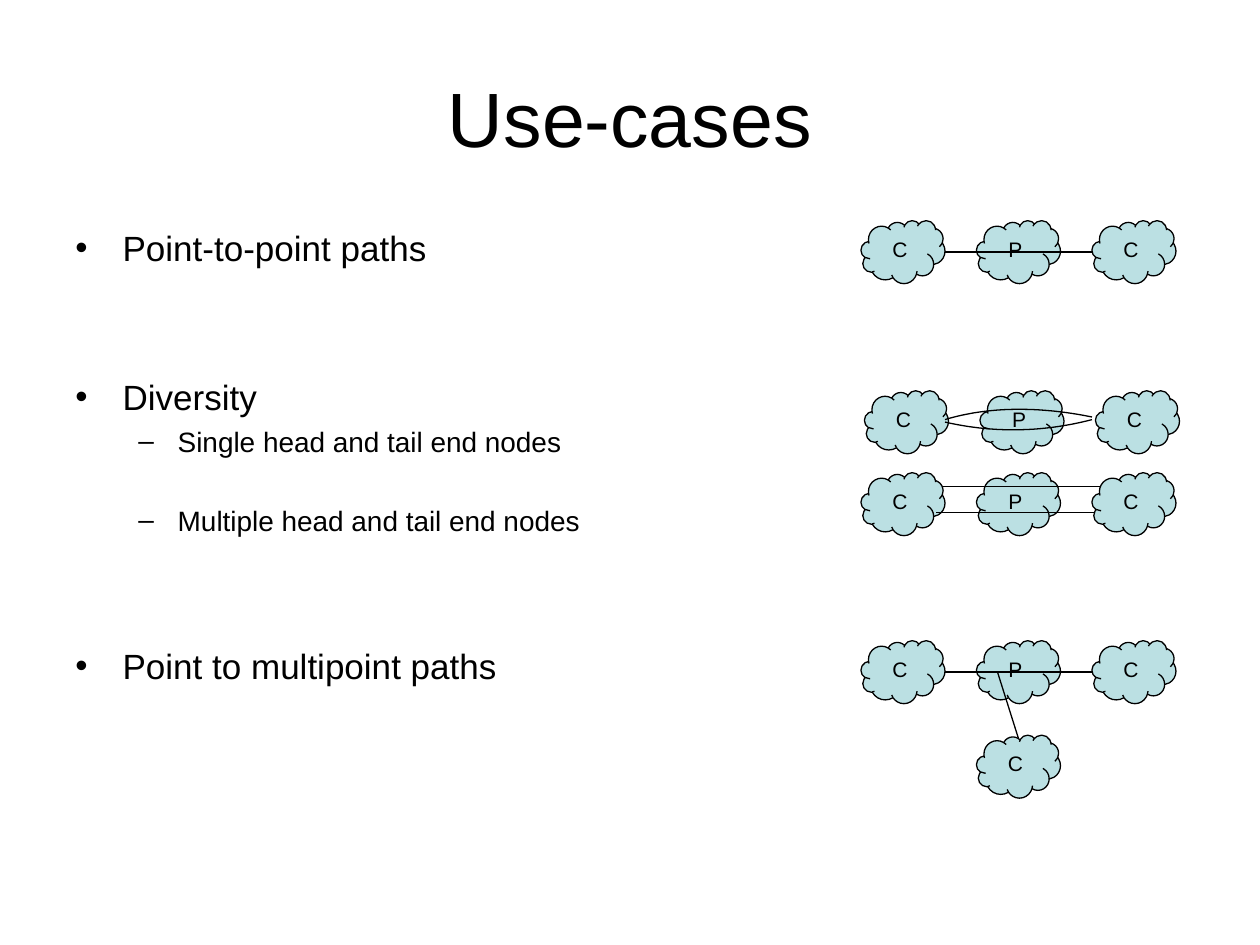
"""Build a slide of path use-cases with small cloud network sketches."""
from lxml.etree import SubElement
from pptx import Presentation
from pptx.dml.color import RGBColor
from pptx.enum.shapes import MSO_CONNECTOR, MSO_SHAPE
from pptx.enum.text import MSO_ANCHOR, PP_ALIGN
from pptx.oxml.ns import qn
from pptx.util import Pt

BLACK = RGBColor(0x00, 0x00, 0x00)
TEAL = RGBColor(0xBB, 0xE0, 0xE3)


def style(para, size):
    for run in para.runs:
        run.font.name = "Arial"
        run.font.size = Pt(size)
        run.font.color.rgb = BLACK


def pen(shape):
    shape.line.color.rgb = BLACK
    shape.line.width = Pt(0.75)


deck = Presentation()
deck.slide_width, deck.slide_height = Pt(720), Pt(540)
slide = deck.slides.add_slide(deck.slide_layouts[5])
shapes = slide.shapes

title = shapes.title
title.left, title.top, title.width, title.height = Pt(36), Pt(21.6), Pt(648), Pt(90)
title.text_frame.text = "Use-cases"
title.text_frame.vertical_anchor = MSO_ANCHOR.MIDDLE
title.text_frame.paragraphs[0].alignment = PP_ALIGN.CENTER
style(title.text_frame.paragraphs[0], 44)

points = [
    ("Point-to-point paths", 0, 2),
    ("Diversity", 0, 61),
    ("Single head and tail end nodes", 1, 4),
    ("Multiple head and tail end nodes", 1, 26),
    ("Point to multipoint paths", 0, 61.5),
]
levels = [(20, 27, 27, "•"), (16, 58.5, 22.5, "–")]
body = shapes.add_textbox(Pt(36), Pt(126), Pt(390), Pt(356.4)).text_frame
body.word_wrap = True
body.text = "\n".join(text for text, level, gap in points)
for para, (text, level, gap) in zip(body.paragraphs, points):
    size, left, hang, mark = levels[level]
    para.level = level
    para.space_before = Pt(gap)
    style(para, size)
    props = para._p.get_or_add_pPr()
    props.set("marL", str(Pt(left)))
    props.set("indent", str(-Pt(hang)))
    SubElement(props, qn("a:buFont"), typeface="Arial")
    SubElement(props, qn("a:buChar"), char=mark)

rows = [(492, 126), (494, 223.2), (492, 270), (492, 366)]
clouds = [(left + 66 * i, top, name)
          for left, top in rows for i, name in enumerate("CPC")]
clouds.append((558, 420, "C"))
for left, top, name in clouds:
    cloud = shapes.add_shape(MSO_SHAPE.CLOUD, Pt(left), Pt(top), Pt(48), Pt(36))
    cloud.shadow.inherit = False
    cloud.fill.solid()
    cloud.fill.fore_color.rgb = TEAL
    pen(cloud)
    frame = cloud.text_frame
    frame.text = name
    frame.vertical_anchor = MSO_ANCHOR.TOP
    frame.paragraphs[0].alignment = PP_ALIGN.CENTER
    style(frame.paragraphs[0], 12)

lines = [
    (540, 144, 624, 144),
    (538.5, 278, 628.5, 278),
    (535, 293, 625, 293),
    (540, 384, 624, 384),
    (570, 384, 582, 422),
]
for ends in lines:
    link = shapes.add_connector(MSO_CONNECTOR.STRAIGHT, *map(Pt, ends))
    pen(link)
    SubElement(link._element.spPr, qn("a:effectLst"))

curves = [
    [(540, 239.8), (565, 232.2), (594, 232.2), (624, 238.3)],
    [(540, 241.2), (565, 247), (594, 247.7), (624, 239.8)],
]
steps = 24
for curve in curves:
    dots = []
    for i in range(steps + 1):
        t = i / steps
        parts = ((1 - t) ** 3, 3 * t * (1 - t) ** 2, 3 * t * t * (1 - t), t ** 3)
        dots.append(tuple(Pt(sum(part * spot[axis] for part, spot in zip(parts, curve)))
                          for axis in (0, 1)))
    pad = shapes.build_freeform(*dots[0])
    pad.add_line_segments(dots[1:], close=False)
    arc = pad.convert_to_shape()
    arc.shadow.inherit = False
    arc.fill.background()
    pen(arc)

deck.save("out.pptx")
